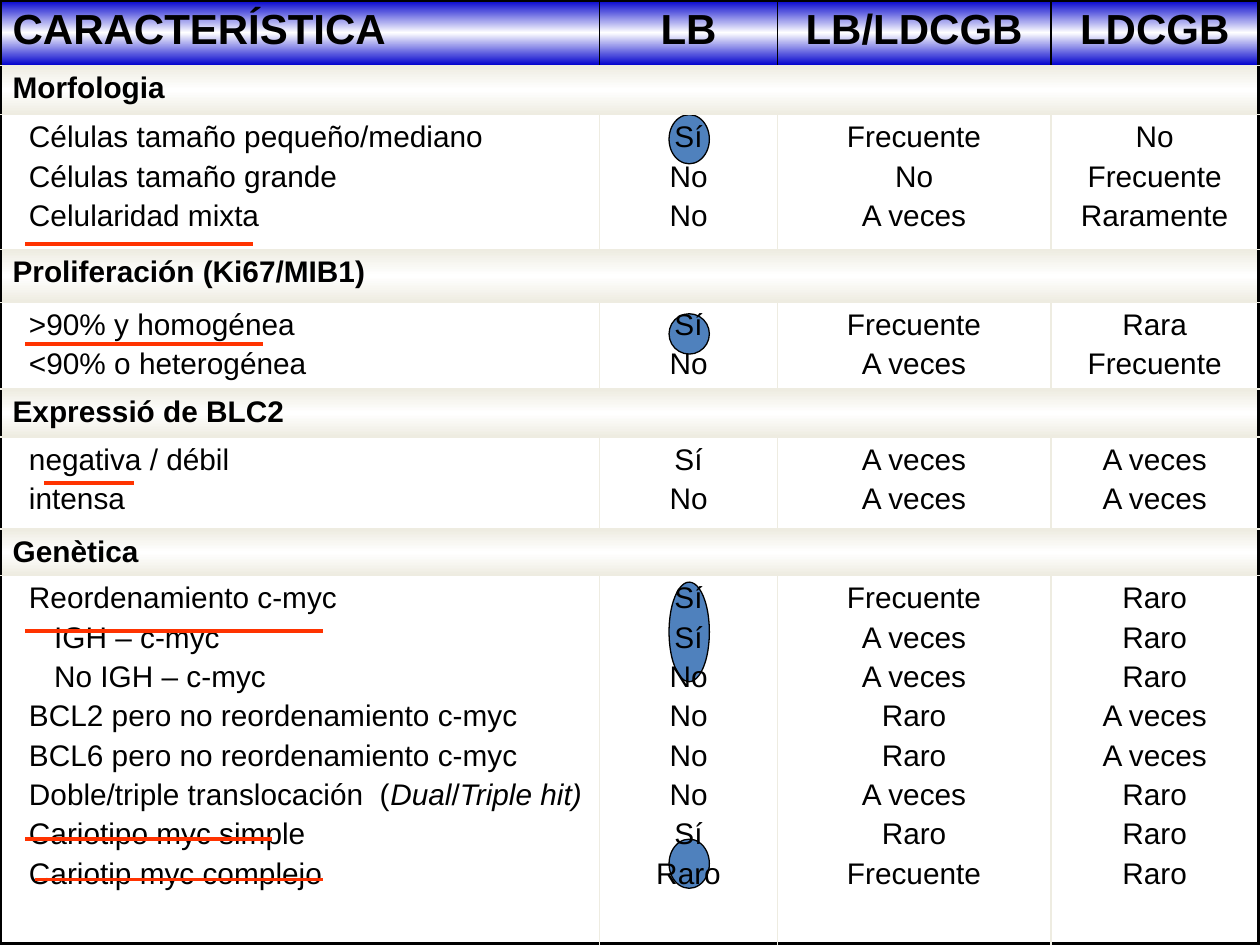
from pptx import Presentation
from pptx import util as u
from pptx.dml.color import RGBColor
from pptx.enum import shapes, text
from pptx.oxml import parse_xml
from pptx.oxml.ns import nsdecls

BLACK = RGBColor(0x00, 0x00, 0x00)
WHITE = RGBColor(0xFF, 0xFF, 0xFF)
NAVY = RGBColor(0x00, 0x00, 0xCC)
CREAM = RGBColor(0xEE, 0xEC, 0xE1)
BLUE = RGBColor(0x4F, 0x81, 0xBD)
RED = RGBColor(0xFF, 0x33, 0x00)

COLUMN_WIDTHS = [4.76, 1.41, 2.17, 1.65]
ROW_HEIGHTS = [0.52, 0.39, 1.07, 0.42, 0.69, 0.38, 0.73, 0.37, 2.92]
HEADER = ["CARACTERÍSTICA", "LB", "LB/LDCGB", "LDCGB"]
INDENT, DEEP_INDENT = 0.13, 0.33
DEEP_LINES = {"IGH – c-myc", "No IGH – c-myc"}
ITALIC_PARTS = {"Dual", "Triple hit)"}

# Each section: title, then one line per feature (label, LB, LB/LDCGB, LDCGB)
SECTIONS = [
    ("Morfologia", [
        ("Células tamaño pequeño/mediano", "Sí", "Frecuente", "No"),
        ("Células tamaño grande", "No", "No", "Frecuente"),
        ("Celularidad mixta", "No", "A veces", "Raramente")]),
    ("Proliferación (Ki67/MIB1)", [
        (">90% y homogénea", "Sí", "Frecuente", "Rara"),
        ("<90% o heterogénea", "No", "A veces", "Frecuente")]),
    ("Expressió de BLC2", [
        ("negativa / débil", "Sí", "A veces", "A veces"),
        ("intensa", "No", "A veces", "A veces")]),
    ("Genètica", [
        ("Reordenamiento c-myc", "Sí", "Frecuente", "Raro"),
        ("IGH – c-myc", "Sí", "A veces", "Raro"),
        ("No IGH – c-myc", "No", "A veces", "Raro"),
        ("BCL2 pero no reordenamiento c-myc", "No", "Raro", "A veces"),
        ("BCL6 pero no reordenamiento c-myc", "No", "Raro", "A veces"),
        (("Doble/triple translocación  (", "Dual", "/", "Triple hit)"),
         "No", "A veces", "Raro"),
        ("Cariotipo myc simple", "Sí", "Raro", "Raro"),
        ("Cariotip myc complejo", "Raro", "Frecuente", "Raro")]),
]

# Circles in the LB column: top, height
CIRCLES = [(6.66, 0.39), (4.62, 0.79), (2.49, 0.32), (0.91, 0.39)]
# Red underlines: left, right, y
UNDERLINES = [(0.2, 2.01, 1.94), (0.2, 2.09, 2.73), (0.35, 1.06, 3.83),
              (0.2, 2.16, 6.66), (0.28, 2.56, 6.98), (0.2, 2.56, 5.01)]


class SlideBuilder:
    font = "Arial"
    header_size = u.Pt(24)
    body_size = u.Pt(17)

    def __init__(self, slide):
        self.slide = slide

    def circle(self, left, top, width, height):
        shape = self.slide.shapes.add_shape(
            shapes.MSO_SHAPE.OVAL, u.Inches(left), u.Inches(top),
            u.Inches(width), u.Inches(height))
        shape.shadow.inherit = False
        shape.fill.solid()
        shape.fill.fore_color.rgb = BLUE
        shape.line.color.rgb = BLACK
        shape.line.width = u.Pt(0.75)

    def underline(self, left, right, y):
        line = self.slide.shapes.add_connector(
            shapes.MSO_CONNECTOR.STRAIGHT, u.Inches(left), u.Inches(y),
            u.Inches(right), u.Inches(y))
        line.line.color.rgb = RED
        line.line.width = u.Pt(2.25)
        line._element.spPr.append(parse_xml(f"<a:effectLst {nsdecls('a')}/>"))

    def table(self, widths, heights):
        frame = self.slide.shapes.add_table(
            len(heights), len(widths), 0, 0,
            u.Inches(sum(widths)), u.Inches(sum(heights)))
        table = frame.table
        table.first_row = table.horz_banding = False
        for column, width in zip(table.columns, widths):
            column.width = u.Inches(width)
        for row, height in zip(table.rows, heights):
            row.height = u.Inches(height)
        return table

    def cell_text(self, cell, lines, size, bold=False, centered=False, indented=False):
        """Fill a cell; a line given as a tuple is split into several runs."""
        frame = cell.text_frame
        for index, line in enumerate(lines):
            paragraph = frame.add_paragraph() if index else frame.paragraphs[0]
            for part in (line if isinstance(line, tuple) else (line,)):
                run = paragraph.add_run()
                run.text = part
                run.font.name = self.font
                run.font.size = size
                run.font.bold = bold
                run.font.italic = part in ITALIC_PARTS
                run.font.color.rgb = BLACK
            paragraph.alignment = (text.PP_ALIGN.CENTER if centered
                                   else text.PP_ALIGN.LEFT)
            properties = paragraph._p.get_or_add_pPr()
            if indented:
                indent = DEEP_INDENT if line in DEEP_LINES else INDENT
                properties.set("marL", str(u.Inches(indent)))
            properties.append(parse_xml(
                f'<a:spcBef {nsdecls("a")}><a:spcPct val="20000"/></a:spcBef>'))

    def cell_style(self, cell, borders, edge_color=None):
        """Borders by side as (colour, points); gradient fill from edge_color to white."""
        properties = cell._tc.get_or_add_tcPr()
        for side in "LRTB":
            color, width = borders[side]
            properties.append(parse_xml(
                f'<a:ln{side} {nsdecls("a")} w="{u.Pt(width)}"><a:solidFill>'
                f'<a:srgbClr val="{color}"/></a:solidFill></a:ln{side}>'))
        if edge_color is None:
            cell.fill.background()
            return
        stops = "".join(
            f'<a:gs pos="{position}"><a:srgbClr val="{color}"/></a:gs>'
            for position, color in ((0, edge_color), (50000, WHITE), (100000, edge_color)))
        properties.append(parse_xml(
            f'<a:gradFill {nsdecls("a")} rotWithShape="1"><a:gsLst>{stops}</a:gsLst>'
            '<a:lin ang="5400000" scaled="1"/></a:gradFill>'))


def main():
    presentation = Presentation()
    presentation.slide_width = u.Inches(10)
    presentation.slide_height = u.Inches(7.5)
    builder = SlideBuilder(presentation.slides.add_slide(presentation.slide_layouts[6]))

    # Circles behind the table
    for top, height in CIRCLES:
        builder.circle(5.31, top, 0.32, height)

    # Table text
    table = builder.table(COLUMN_WIDTHS, ROW_HEIGHTS)
    for column, title in enumerate(HEADER):
        builder.cell_text(table.cell(0, column), [title], builder.header_size,
                          bold=True, centered=column > 0)
    for index, (title, features) in enumerate(SECTIONS):
        row = 2 * index + 1
        table.cell(row, 0).merge(table.cell(row, 3))
        builder.cell_text(table.cell(row, 0), [title], builder.body_size, bold=True)
        for column, lines in enumerate(zip(*features)):
            builder.cell_text(table.cell(row + 1, column), lines, builder.body_size,
                              centered=column > 0, indented=column == 0)

    # Table fills and borders: thick black frame, thin lines inside
    outer, inner = (BLACK, 2.25), (CREAM, 1)
    last_row, last_column = len(ROW_HEIGHTS) - 1, len(COLUMN_WIDTHS) - 1
    for row in range(last_row + 1):
        is_header, is_section = row == 0, row % 2 == 1
        divider = (BLACK, 1) if is_header else inner
        edge_color = NAVY if is_header else CREAM if is_section else None
        for column in range(last_column + 1):
            borders = {
                "L": outer if column == 0 else divider,
                "R": outer if is_section or column == last_column else divider,
                "T": outer if is_header else inner,
                "B": outer if row == last_row else inner}
            builder.cell_style(table.cell(row, column), borders, edge_color)

    # Red underlines on top
    for left, right, y in UNDERLINES:
        builder.underline(left, right, y)

    presentation.save("out.pptx")


if __name__ == "__main__":
    main()
